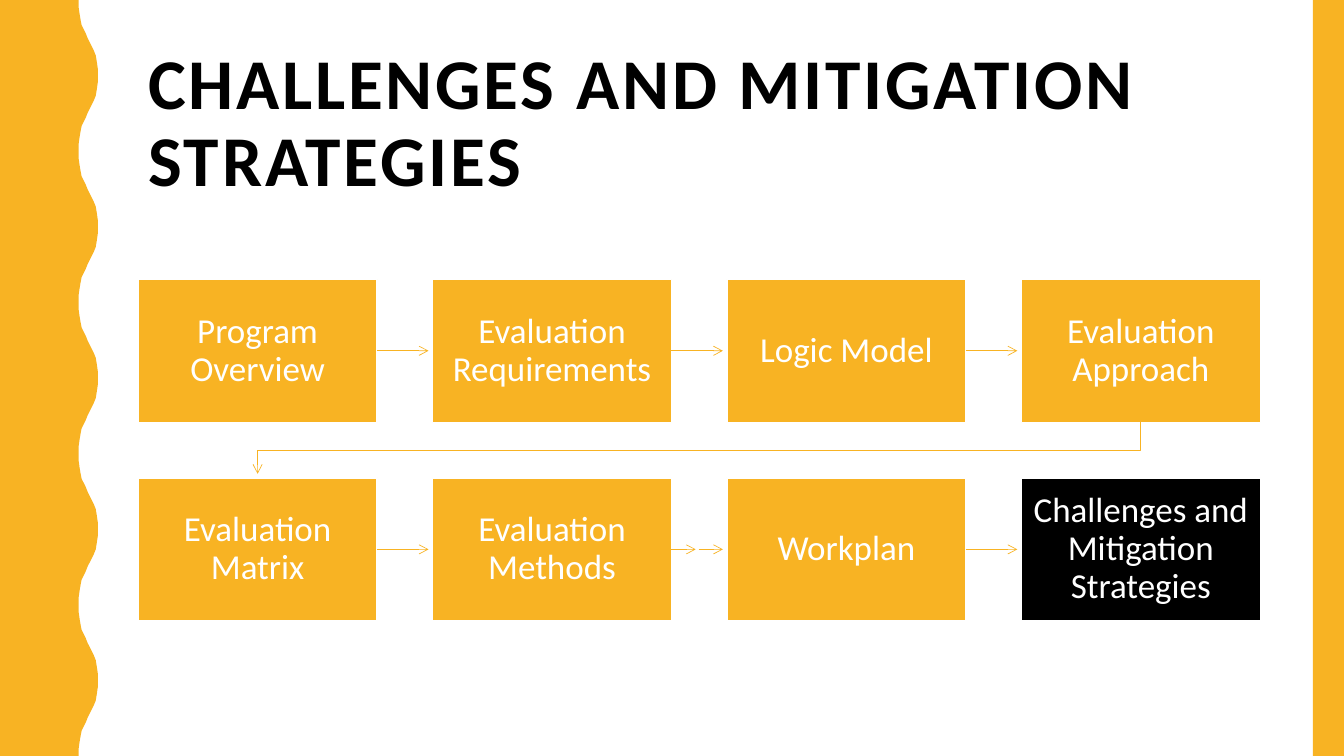
"""Build the slide that shows the evaluation steps as a two-row process."""
from lxml import etree
from pptx import Presentation
from pptx.dml.color import RGBColor
from pptx.enum.shapes import MSO_CONNECTOR, MSO_SHAPE
from pptx.enum.text import MSO_ANCHOR, MSO_AUTO_SIZE, PP_ALIGN
from pptx.oxml.ns import qn
from pptx.util import Inches, Pt

RECT = MSO_SHAPE.RECTANGLE
STRAIGHT = MSO_CONNECTOR.STRAIGHT
MIDDLE = MSO_ANCHOR.MIDDLE
LEFT, CENTER = PP_ALIGN.LEFT, PP_ALIGN.CENTER
GOLD, BLACK, WHITE = "F8B323", "000000", "FFFFFF"
WIDTH, HEIGHT = 13.33, 7.5


def paint(fmt, color):
    fmt.solid()
    fmt.fore_color.rgb = RGBColor.from_string(color)


def write(sp, text, size, color, align, bold=False, spacing=0, inset=0.1):
    tf = sp.text_frame
    tf.word_wrap = True
    tf.auto_size = MSO_AUTO_SIZE.NONE
    tf.vertical_anchor = MIDDLE
    tf.margin_left = tf.margin_right = Inches(inset)
    tf.margin_top = tf.margin_bottom = Inches(inset / 2)
    p = tf.paragraphs[0]
    p.alignment = align
    p.line_spacing = 0.9
    r = p.add_run()
    r.text = text
    r.font.name = "Calibri"
    r.font.size = Pt(size)
    r.font.bold = bold
    r.font.color.rgb = RGBColor.from_string(color)
    if spacing:
        r.font._element.set("spc", str(spacing * 100))


prs = Presentation()
prs.slide_width, prs.slide_height = Inches(WIDTH), Inches(HEIGHT)
s = prs.slides.add_slide(prs.slide_layouts[5])
paint(s.background.fill, WHITE)

title = s.shapes.title
title.left, title.top = Inches(1.37), Inches(0.42)
title.width, title.height = Inches(11.13), Inches(1.63)
write(title, "CHALLENGES AND MITIGATION STRATEGIES", 51, BLACK, LEFT,
      bold=True, spacing=2)

HALF_WAVE = 0.75
CURVE = [(0.78, 0), (0.78, 0.07), (0.79, 0.14), (0.8, 0.2), (0.81, 0.25),
         (0.83, 0.29), (0.85, 0.33), (0.87, 0.38), (0.89, 0.42), (0.91, 0.46),
         (0.93, 0.5), (0.95, 0.55), (0.96, 0.61), (0.97, 0.68), (0.97, 0.75)]
edge = []
for i in range(10):
    if i % 2 == 0:
        edge += [(x, i * HALF_WAVE + y) for x, y in CURVE]
    else:
        edge += [(x, (i + 1) * HALF_WAVE - y) for x, y in reversed(CURVE)]
edge.append((0, HEIGHT))
fb = s.shapes.build_freeform(0, 0)
fb.add_line_segments([(Inches(x), Inches(y)) for x, y in edge], close=True)
wave = fb.convert_to_shape()
band = s.shapes.add_shape(RECT, Inches(13.02), 0, Inches(0.31), Inches(HEIGHT))
for sp in (wave, band):
    sp.shadow.inherit = False
    paint(sp.fill, GOLD)
    sp.line.fill.background()

STEPS = [["Program Overview", "Evaluation Requirements", "Logic Model",
          "Evaluation Approach"],
         ["Evaluation Matrix", "Evaluation Methods", "Workplan",
          "Challenges and Mitigation Strategies"]]
X0, Y0, BOX_W, BOX_H = 1.37, 2.77, 2.37, 1.42
COL, ROW = 2.92, 1.97
REACH = 0.51
arrows = []
for row, labels in enumerate(STEPS):
    for col, label in enumerate(labels):
        x, y = X0 + col * COL, Y0 + row * ROW
        last = label == STEPS[-1][-1]
        box = s.shapes.add_shape(RECT, Inches(x), Inches(y),
                                 Inches(BOX_W), Inches(BOX_H))
        box.shadow.inherit = False
        paint(box.fill, BLACK if last else GOLD)
        paint(box.line.fill, WHITE)
        box.line.width = Pt(1)
        write(box, label, 25, WHITE, CENTER, inset=0.12)
        if col == len(labels) - 1:
            continue
        start, mid = x + BOX_W, Inches(y + BOX_H / 2)
        spans = [(0, REACH)]
        if label == "Evaluation Methods":
            spans = [(0, 0.24), (0.27, REACH)]
        for a, b in spans:
            arrow = s.shapes.add_connector(STRAIGHT, Inches(start + a), mid,
                                           Inches(start + b), mid)
            if a == 0:
                arrow.begin_connect(box, 3)
            etree.SubElement(arrow._element.spPr, qn("a:effectLst"))
            arrows.append(arrow)

first_mid = Inches(X0 + BOX_W / 2)
last_mid = Inches(X0 + BOX_W / 2 + 3 * COL)
bottom = Y0 + BOX_H
bend = Inches(bottom + 0.28)
fb = s.shapes.build_freeform(last_mid, Inches(bottom))
fb.add_line_segments([(last_mid, bend), (first_mid, bend),
                      (first_mid, Inches(bottom + REACH))], close=False)
turn = fb.convert_to_shape()
turn.shadow.inherit = False
turn.fill.background()
arrows.append(turn)

for arrow in arrows:
    paint(arrow.line.fill, GOLD)
    arrow.line.width = Pt(0.5)
    ln = arrow._element.spPr.find(qn("a:ln"))
    etree.SubElement(ln, qn("a:tailEnd"), type="arrow")

prs.save("out.pptx")
